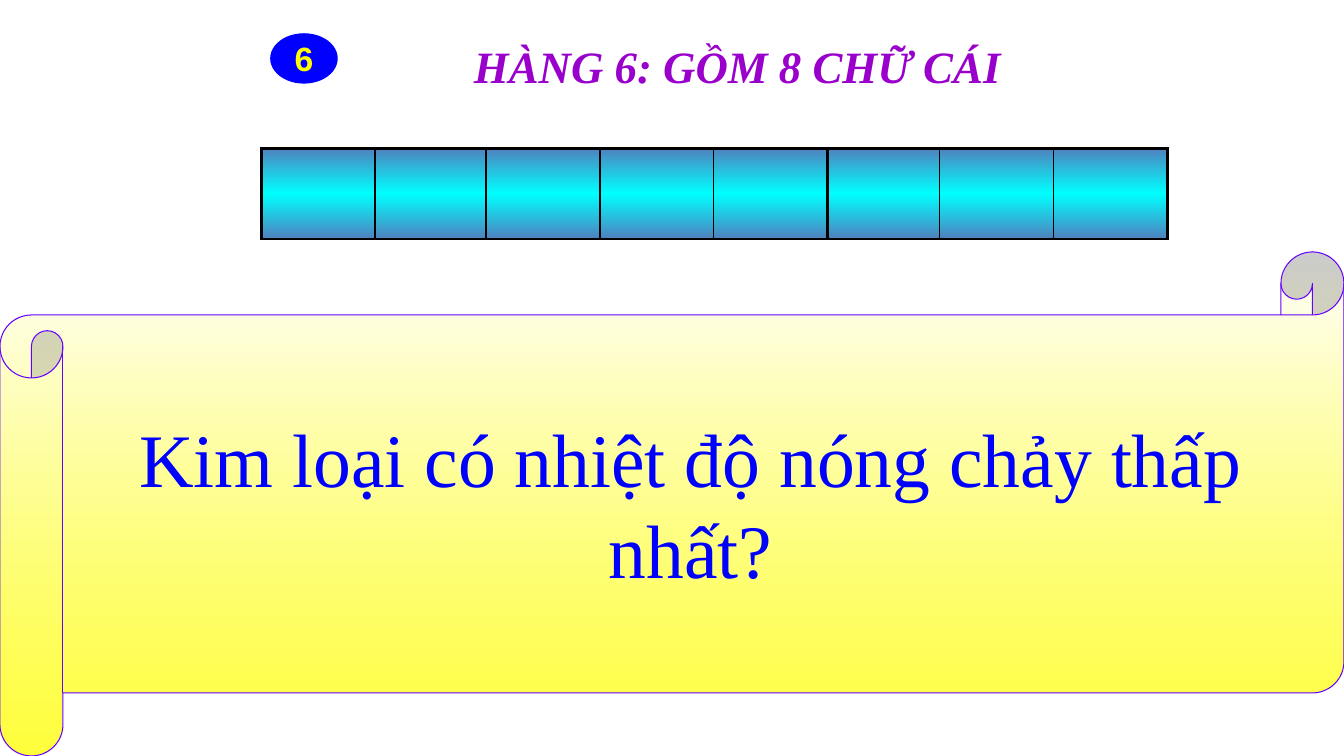
from dataclasses import dataclass

import pptx
import pptx.dml.color
import pptx.enum.shapes
import pptx.enum.text
import pptx.oxml.ns
import pptx.util
from lxml import etree

Inches = pptx.util.Inches
Pt = pptx.util.Pt
Color = pptx.dml.color.RGBColor.from_string
Align = pptx.enum.text.PP_ALIGN
Anchor = pptx.enum.text.MSO_ANCHOR
Shape = pptx.enum.shapes.MSO_SHAPE
qn = pptx.oxml.ns.qn


@dataclass(frozen=True)
class Theme:
    serif: str = "Times New Roman"
    sans: str = "Arial"
    title: str = "9900CC"
    blue: str = "0000FF"
    yellow: str = "FFFF00"
    white: str = "FFFFFF"
    scroll_line: str = "6600FF"
    cell_edge: str = "4F81BD"
    cell_middle: str = "00FFFF"
    border: str = "000000"
    title_size: int = 32
    question_size: int = 54
    badge_size: int = 24
    thick: float = 2.25
    thin: float = 1


theme = Theme()


def set_gradient(fill, element, stops):
    """Fill from top to bottom; stops are (position %, colour, opacity %)."""
    fill.gradient()
    fill.gradient_angle = 270
    stop_list = element.find(".//" + qn("a:gsLst"))
    for old_stop in list(stop_list):
        stop_list.remove(old_stop)
    for position, color, opacity in stops:
        stop = etree.SubElement(stop_list, qn("a:gs"), pos=str(position * 1000))
        tint = etree.SubElement(stop, qn("a:srgbClr"), val=color)
        if opacity < 100:
            etree.SubElement(tint, qn("a:alpha"), val=str(opacity * 1000))


def write_text(shape, text, font_name, size, color, bold=False, italic=False):
    paragraph = shape.text_frame.paragraphs[0]
    paragraph.alignment = Align.CENTER
    run = paragraph.add_run()
    run.text = text
    run.font.name = font_name
    run.font.size = Pt(size)
    run.font.color.rgb = Color(color)
    run.font.bold = bold
    run.font.italic = italic


presentation = pptx.Presentation()
presentation.slide_width = Inches(13.33)
presentation.slide_height = Inches(7.5)
slide = presentation.slides.add_slide(presentation.slide_layouts[5])

# Title
title = slide.shapes.title
title.left, title.top = Inches(3.9), Inches(0.33)
title.width, title.height = Inches(6.83), Inches(0.63)
title.text_frame.vertical_anchor = Anchor.TOP
title.text_frame.auto_size = pptx.enum.text.MSO_AUTO_SIZE.NONE
write_text(title, "HÀNG 6: GỒM 8 CHỮ CÁI", theme.serif, theme.title_size,
           theme.title, bold=True, italic=True)

# Scroll with the question
scroll = slide.shapes.add_shape(
    Shape.HORIZONTAL_SCROLL, Inches(0), Inches(2.5), Inches(13.33), Inches(5))
scroll.shadow.inherit = False
scroll.line.color.rgb = Color(theme.scroll_line)
scroll.line.width = Pt(0.75)
set_gradient(scroll.fill, scroll.element,
             [(0, theme.white, 100), (100, theme.yellow, 76)])
title.element.addprevious(scroll.element)

question = slide.shapes.add_textbox(
    Inches(0.76), Inches(4.04), Inches(12.18), Inches(1.92))
question.text_frame.word_wrap = True
write_text(question, "Kim loại có nhiệt độ nóng chảy thấp nhất?",
           theme.serif, theme.question_size, theme.blue)

# Eight letter boxes: three tables of three, the last two sharing a column
columns = 3
column_width = 1.13
cell_stops = [(0, theme.cell_edge, 100), (50, theme.cell_middle, 100),
              (100, theme.cell_edge, 100)]
for left in (2.59, 8.19, 4.82):
    frame = slide.shapes.add_table(
        1, columns, Inches(left), Inches(1.47),
        Inches(column_width * columns), Inches(0.9))
    table = frame.table
    table.first_row = False
    table.horz_banding = False
    for index in range(columns):
        table.columns[index].width = Inches(column_width)
        cell = table.cell(0, index)
        properties = cell._tc.get_or_add_tcPr()
        borders = {
            "a:lnL": theme.thick if index == 0 else theme.thin,
            "a:lnR": theme.thick if index == columns - 1 else theme.thin,
            "a:lnT": theme.thick,
            "a:lnB": theme.thick,
        }
        for tag, width in borders.items():
            line = etree.SubElement(properties, qn(tag), w=str(Pt(width)))
            solid = etree.SubElement(line, qn("a:solidFill"))
            etree.SubElement(solid, qn("a:srgbClr"), val=theme.border)
        set_gradient(cell.fill, properties, cell_stops)

# Row number badge
badge = slide.shapes.add_shape(
    Shape.OVAL, Inches(2.68), Inches(0.33), Inches(0.67), Inches(0.5))
badge.shadow.inherit = False
badge.fill.solid()
badge.fill.fore_color.rgb = Color(theme.blue)
badge.line.fill.background()
badge.text_frame.word_wrap = False
badge.text_frame.vertical_anchor = Anchor.MIDDLE
write_text(badge, "6", theme.sans, theme.badge_size, theme.yellow, bold=True)

presentation.save("out.pptx")
